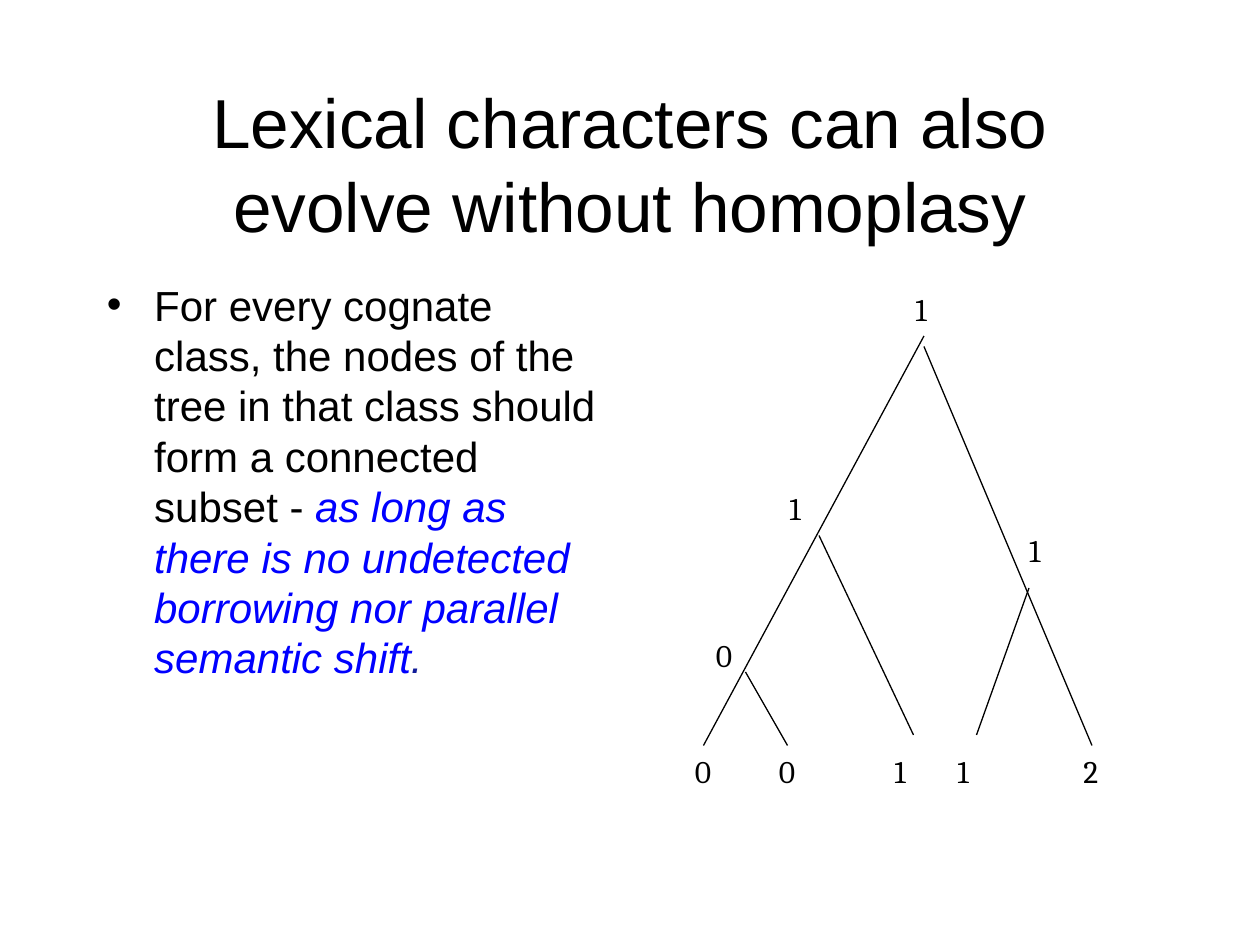
from lxml.etree import SubElement
from pptx import Presentation
from pptx.dml.color import RGBColor
from pptx.enum.shapes import MSO_CONNECTOR
from pptx.enum.text import MSO_ANCHOR, MSO_AUTO_SIZE, PP_ALIGN
from pptx.oxml.ns import qn
from pptx.util import Pt

COLORS = {"black": "000000", "blue": "0000FF", "navy": "111C99"}

# Tree branches: start x, start y, end x, end y
BRANCHES = [
    (528, 192, 402, 426),
    (528, 198, 624, 426),
    (588, 336, 558, 420),
    (426, 384, 450, 426),
    (468, 306, 522, 420),
]

# Character states: text, left, top, width
LEAF_TOP = 426
STATES = [
    ("0", 390, LEAF_TOP, 14.4),
    ("0", 438, LEAF_TOP, 26.6),
    ("1", 504, LEAF_TOP, 26.6),
    ("1", 540, LEAF_TOP, 26.6),
    ("2", 612, LEAF_TOP, 26.6),
    ("1", 444, 276, 24),
    ("1", 516, 162, 26.6),
    ("1", 581, 300, 19.4),
    ("0", 402, 360, 26.6),
]


def format_run(run, size, color="black", font="Arial", italic=False):
    run.font.name = font
    run.font.size = Pt(size)
    run.font.italic = italic
    run.font.color.rgb = RGBColor.from_string(COLORS[color])


def add_text_box(slide, left, top, width, height):
    shape = slide.shapes.add_textbox(Pt(left), Pt(top), Pt(width), Pt(height))
    shape.text_frame.word_wrap = True
    return shape.text_frame


def set_title(slide, text):
    title = slide.shapes.title
    title.left, title.top, title.width, title.height = Pt(54), Pt(48), Pt(612), Pt(90)
    text_frame = title.text_frame
    text_frame.text = text
    text_frame.auto_size = MSO_AUTO_SIZE.NONE
    text_frame.vertical_anchor = MSO_ANCHOR.MIDDLE
    paragraph = text_frame.paragraphs[0]
    paragraph.alignment = PP_ALIGN.CENTER
    paragraph.line_spacing = Pt(48)
    format_run(paragraph.runs[0], 39.6)


def add_bullet(slide, parts):
    paragraph = add_text_box(slide, 54, 156, 300, 324).paragraphs[0]
    paragraph.line_spacing = Pt(28.8)
    for text, color, italic in parts:
        run = paragraph.add_run()
        run.text = text
        format_run(run, 24, color, italic=italic)
    # Hanging bullet
    properties = paragraph._p.get_or_add_pPr()
    properties.set("marL", str(Pt(27)))
    properties.set("indent", str(-Pt(27)))
    SubElement(properties, qn("a:buFont"), typeface="Arial")
    SubElement(properties, qn("a:buChar"), char="•")


def add_branch(slide, start_x, start_y, end_x, end_y):
    branch = slide.shapes.add_connector(
        MSO_CONNECTOR.STRAIGHT, Pt(start_x), Pt(start_y), Pt(end_x), Pt(end_y))
    branch.line.width = Pt(0.75)
    branch.line.color.rgb = RGBColor.from_string(COLORS["black"])
    SubElement(branch._element.spPr, qn("a:effectLst"))


def add_state(slide, text, left, top, width):
    text_frame = add_text_box(slide, left, top, width, 36)
    text_frame.text = text
    format_run(text_frame.paragraphs[0].runs[0], 18, font="Cambria")


def main():
    presentation = Presentation()
    presentation.slide_width, presentation.slide_height = Pt(720), Pt(540)
    slide = presentation.slides.add_slide(presentation.slide_layouts[5])

    # Title and explanation
    set_title(slide, "Lexical characters can also evolve without homoplasy")
    add_bullet(slide, [
        ("For every cognate class, the nodes of the tree in that class should "
         "form a connected subset - ", "black", False),
        ("as long as there is no undetected borrowing nor parallel semantic shift",
         "blue", True),
        (".", "navy", True),
    ])

    # Tree with its character states
    for branch in BRANCHES:
        add_branch(slide, *branch)
    for state in STATES:
        add_state(slide, *state)

    presentation.save("out.pptx")


if __name__ == "__main__":
    main()
